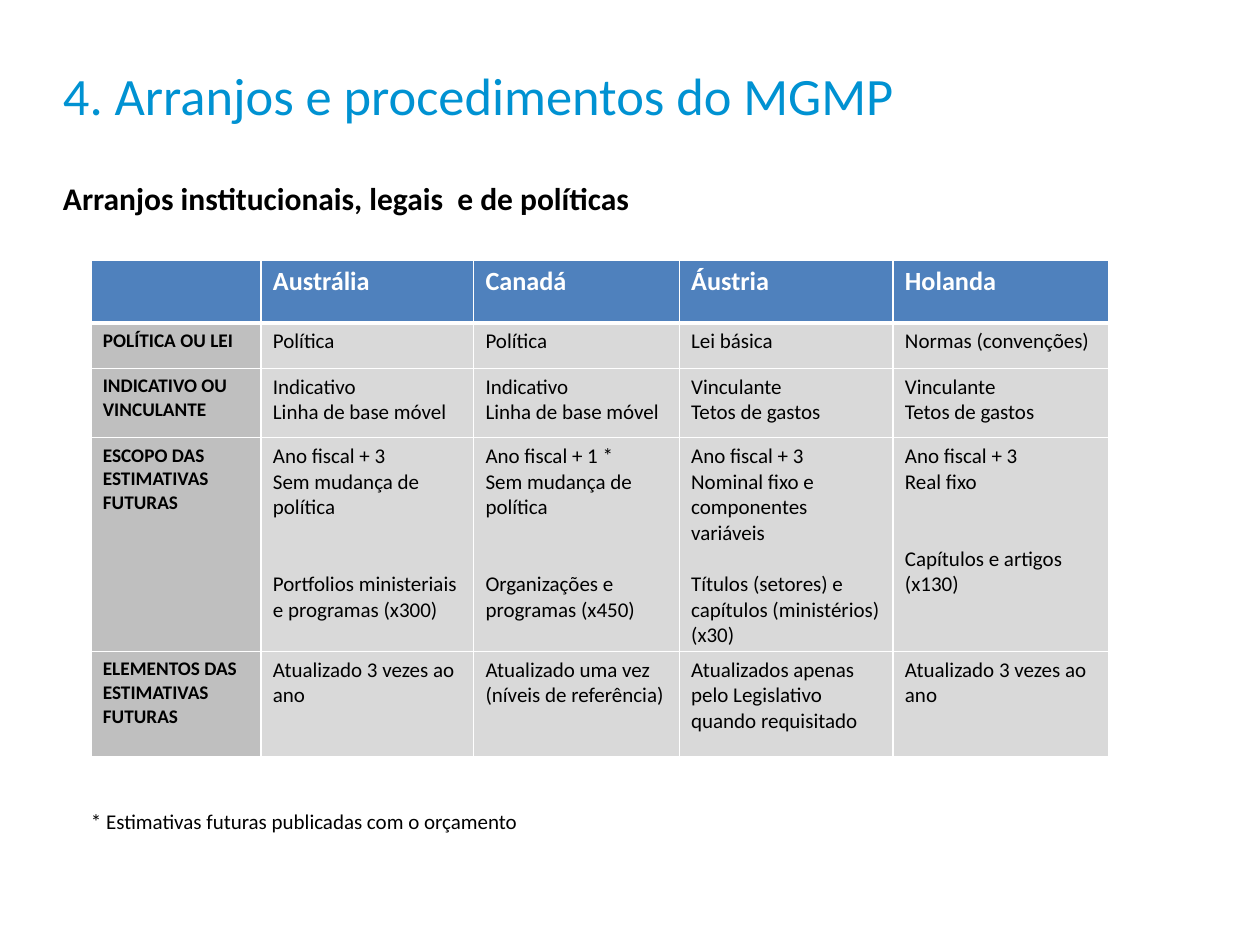
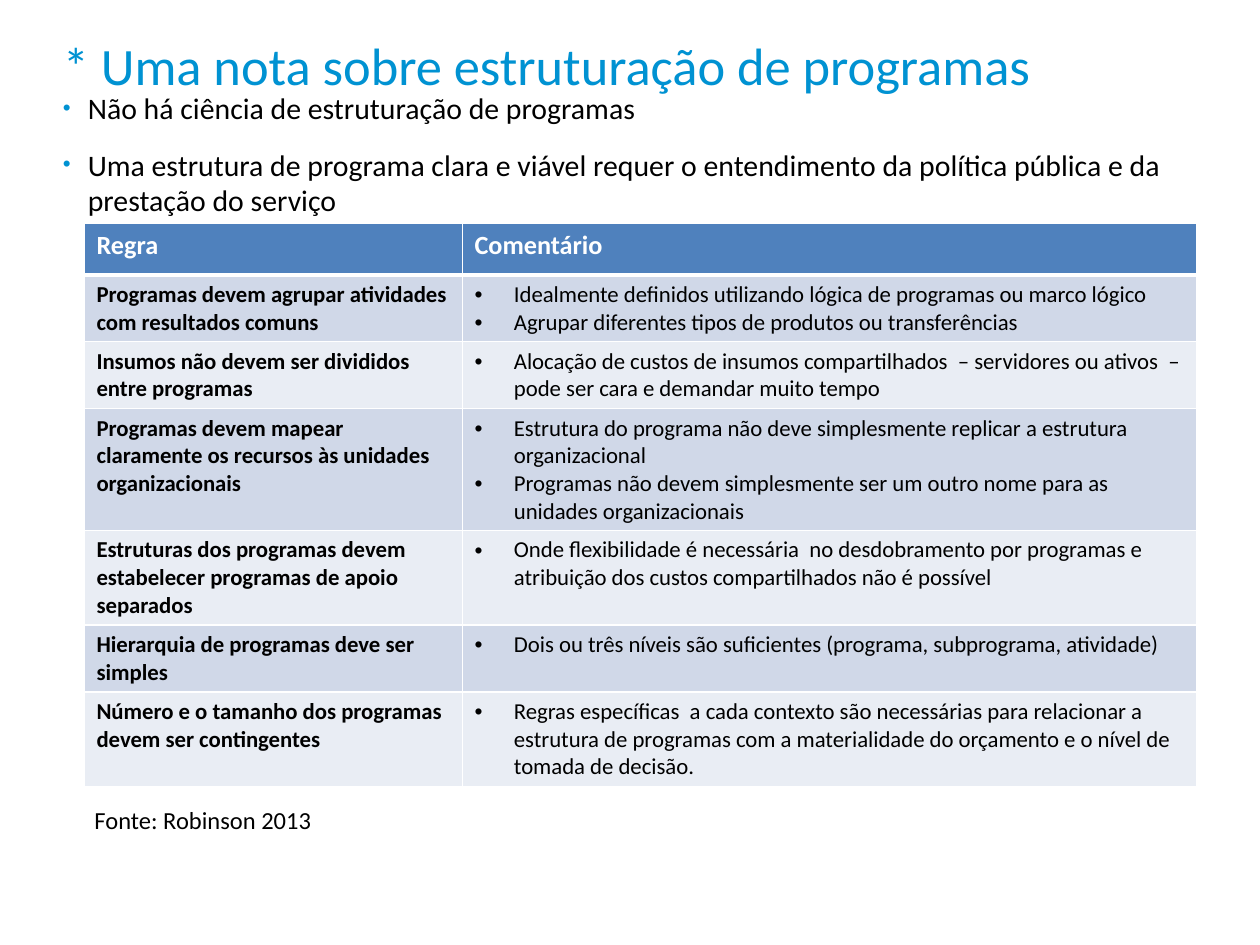
from lxml.etree import SubElement
from pptx import Presentation
from pptx.dml.color import RGBColor
from pptx.oxml.ns import qn
from pptx.util import Pt

FONT = "Calibri"
TITLE_BLUE = RGBColor(0x00, 0x92, 0xD2)
HEADER_BLUE = RGBColor(0x4F, 0x81, 0xBD)
BAND_DARK = RGBColor(0xD0, 0xD8, 0xE8)
BAND_LIGHT = RGBColor(0xE9, 0xED, 0xF4)
LABEL_GREY = RGBColor(0xBF, 0xBF, 0xBF)
CELL_GREY = RGBColor(0xD9, 0xD9, 0xD9)
BLACK = RGBColor(0x00, 0x00, 0x00)
WHITE = RGBColor(0xFF, 0xFF, 0xFF)

LEFT = 36
LINE = 14.65

COUNTRIES = ["", "Austrália", "Canadá", "Áustria", "Holanda"]
ARRANGEMENTS = [
    ["POLÍTICA OU LEI", "Política", "Política", "Lei básica", "Normas (convenções)"],
    ["INDICATIVO OU VINCULANTE",
     ["Indicativo", "Linha de base móvel"],
     ["Indicativo", "Linha de base móvel"],
     ["Vinculante", "Tetos de gastos"],
     ["Vinculante", "Tetos de gastos"]],
    ["ESCOPO DAS ESTIMATIVAS FUTURAS",
     ["Ano fiscal + 3", "Sem mudança de política",
      ("Portfolios ministeriais e programas (x300)", 2 * LINE)],
     ["Ano fiscal + 1 *", "Sem mudança de política",
      ("Organizações e programas (x450)", 2 * LINE)],
     ["Ano fiscal + 3", "Nominal fixo e componentes variáveis",
      ("Títulos (setores) e capítulos (ministérios) (x30)", LINE)],
     ["Ano fiscal + 3", "Real fixo", ("Capítulos e artigos (x130)", 2 * LINE)]],
    ["ELEMENTOS DAS ESTIMATIVAS FUTURAS",
     "Atualizado 3 vezes ao ano",
     "Atualizado uma vez (níveis de referência)",
     "Atualizados apenas pelo Legislativo quando requisitado",
     "Atualizado 3 vezes ao ano"],
]

RULES = [
    ["Programas devem agrupar atividades com resultados comuns",
     ["Idealmente definidos utilizando lógica de programas ou marco lógico",
      "Agrupar diferentes tipos de produtos ou transferências"]],
    ["Insumos não devem ser divididos entre programas",
     "Alocação de custos de insumos compartilhados  – servidores ou ativos  – "
     "pode ser cara e demandar muito tempo"],
    ["Programas devem mapear claramente os recursos às unidades organizacionais",
     ["Estrutura do programa não deve simplesmente replicar a estrutura organizacional",
      "Programas não devem simplesmente ser um outro nome para as unidades organizacionais"]],
    ["Estruturas dos programas devem estabelecer programas de apoio separados",
     "Onde flexibilidade é necessária  no desdobramento por programas e "
     "atribuição dos custos compartilhados não é possível"],
    ["Hierarquia de programas deve ser simples",
     "Dois ou três níveis são suficientes (programa, subprograma, atividade)"],
    ["Número e o tamanho dos programas devem ser contingentes",
     "Regras específicas  a cada contexto são necessárias para relacionar a estrutura "
     "de programas com a materialidade do orçamento e o nível de tomada de decisão."],
]


def add_bullet(paragraph, indent, color=None, percent=100):
    """Give a paragraph a hanging round bullet."""
    properties = paragraph._p.get_or_add_pPr()
    properties.set("marL", str(Pt(indent)))
    properties.set("indent", str(-Pt(indent)))
    if color is not None:
        bullet_color = SubElement(properties, qn("a:buClr"))
        SubElement(bullet_color, qn("a:srgbClr"), val=str(color))
    SubElement(properties, qn("a:buSzPct"), val=str(percent * 1000))
    SubElement(properties, qn("a:buFont"), typeface="Arial")
    SubElement(properties, qn("a:buChar"), char="•")


def write_text(frame, text, size=12, color=BLACK, bold=False, after=0, bullet=None):
    """Fill a frame with a string or a list of strings and (string, space before) pairs."""
    items = text if isinstance(text, list) else [text]
    for index, item in enumerate(items):
        words, before = item if isinstance(item, tuple) else (item, 0)
        paragraph = frame.paragraphs[0] if index == 0 else frame.add_paragraph()
        if bullet:
            add_bullet(paragraph, **bullet)
        paragraph.space_before = Pt(before)
        paragraph.space_after = Pt(after)
        font = paragraph.font
        if words:
            run = paragraph.add_run()
            run.text = words
            font = run.font
        font.name = FONT
        font.size = Pt(size)
        font.bold = bold
        font.color.rgb = color


def add_text(slide, text, top, width, height, left=LEFT, **style):
    """Place a text box without insets."""
    box = slide.shapes.add_textbox(Pt(left), Pt(top), Pt(width), Pt(height))
    frame = box.text_frame
    frame.word_wrap = True
    frame.margin_left = frame.margin_right = frame.margin_top = frame.margin_bottom = 0
    write_text(frame, text, **style)


def add_title(slide, text, top):
    """Place a slide title."""
    add_text(slide, text, top, 648, 36, size=30, color=TITLE_BLUE, after=6)


def format_cell(cell, text, fill, top_line=1, bottom_line=1, **style):
    """Set the margins, white borders, fill and text of a table cell."""
    cell.margin_left = cell.margin_right = Pt(6.8)
    cell.margin_top, cell.margin_bottom = Pt(3.4), Pt(2)
    properties = cell._tc.get_or_add_tcPr()
    for side, width in zip("LRTB", (1, 1, top_line, bottom_line)):
        line = SubElement(properties, qn(f"a:ln{side}"), w=str(Pt(width)))
        line_fill = SubElement(line, qn("a:solidFill"))
        SubElement(line_fill, qn("a:srgbClr"), val=str(WHITE))
    cell.fill.solid()
    cell.fill.fore_color.rgb = fill
    write_text(cell.text_frame, text, **style)


def add_grid(slide, left, top, widths, heights, header, rows, fills, label_size, body):
    """Place a table with a blue header; fills holds (label, body) colours to alternate."""
    grid = slide.shapes.add_table(len(heights), len(widths), Pt(left), Pt(top),
                                  Pt(sum(widths)), Pt(sum(heights))).table
    for column, width in zip(grid.columns, widths):
        column.width = Pt(width)
    for row, height in zip(grid.rows, heights):
        row.height = Pt(height)
    for column, heading in enumerate(header):
        format_cell(grid.cell(0, column), heading, HEADER_BLUE, bottom_line=3,
                    size=15, color=WHITE, bold=True)
    for number, (label, *values) in enumerate(rows, start=1):
        label_fill, value_fill = fills[(number - 1) % len(fills)]
        top_line = 3 if number == 1 else 1
        format_cell(grid.cell(number, 0), label, label_fill, top_line,
                    size=label_size, bold=True)
        for column, value in enumerate(values, start=1):
            format_cell(grid.cell(number, column), value, value_fill, top_line, **body)


def build_arrangements(slide):
    """Compare the arrangements of four countries."""
    add_title(slide, "4. Arranjos e procedimentos do MGMP", 36)
    add_text(slide, "Arranjos institucionais, legais  e de políticas", 102.2, 636.5, 22,
             size=18, bold=True, after=12)
    add_grid(slide, 52, 148.5, [97.2, 121.5, 117.5, 122.2, 123.3],
             [36, 26, 39.6, 122.2, 60], COUNTRIES, ARRANGEMENTS,
             [(LABEL_GREY, CELL_GREY)], 11, {"size": 12})
    add_text(slide, "* Estimativas futuras publicadas com o orçamento", 462.2, 636.5, 14.6,
             left=52, after=12)


def build_program_rules(slide):
    """List the rules for structuring programmes."""
    add_title(slide, "* Uma nota sobre estruturação de programas", 18.7)
    add_text(slide, ["Não há ciência de estruturação de programas",
                     "Uma estrutura de programa clara e viável requer o entendimento "
                     "da política pública e da prestação do serviço"],
             51.2, 648, 74.2, size=17, after=12,
             bullet={"indent": 14.2, "color": TITLE_BLUE, "percent": 75})
    add_grid(slide, 48.4, 127.6, [216, 419.6], [29.5, 38.2, 38.2, 69.7, 54, 38.2, 54],
             ["Regra", "Comentário"], RULES,
             [(BAND_DARK, BAND_DARK), (BAND_LIGHT, BAND_LIGHT)], 13,
             {"size": 13, "bullet": {"indent": 22.5}})
    add_text(slide, "Fonte: Robinson 2013", 460.2, 648, 17, left=54, size=14, after=12)


def main():
    """Build and save the presentation."""
    deck = Presentation()
    deck.slide_width, deck.slide_height = Pt(720), Pt(540)
    for build in (build_arrangements, build_program_rules):
        build(deck.slides.add_slide(deck.slide_layouts[6]))
    deck.save("out.pptx")


if __name__ == "__main__":
    main()
